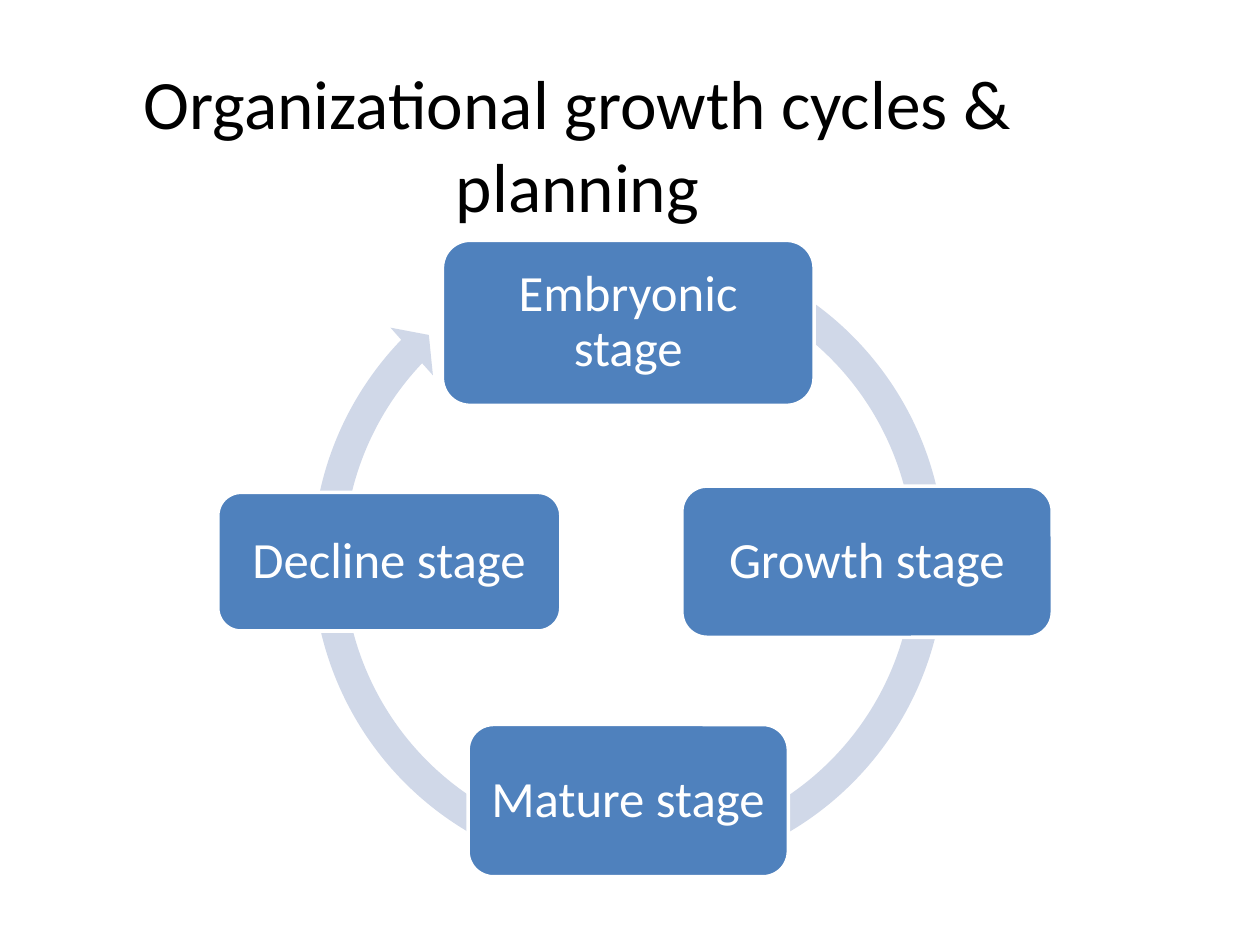
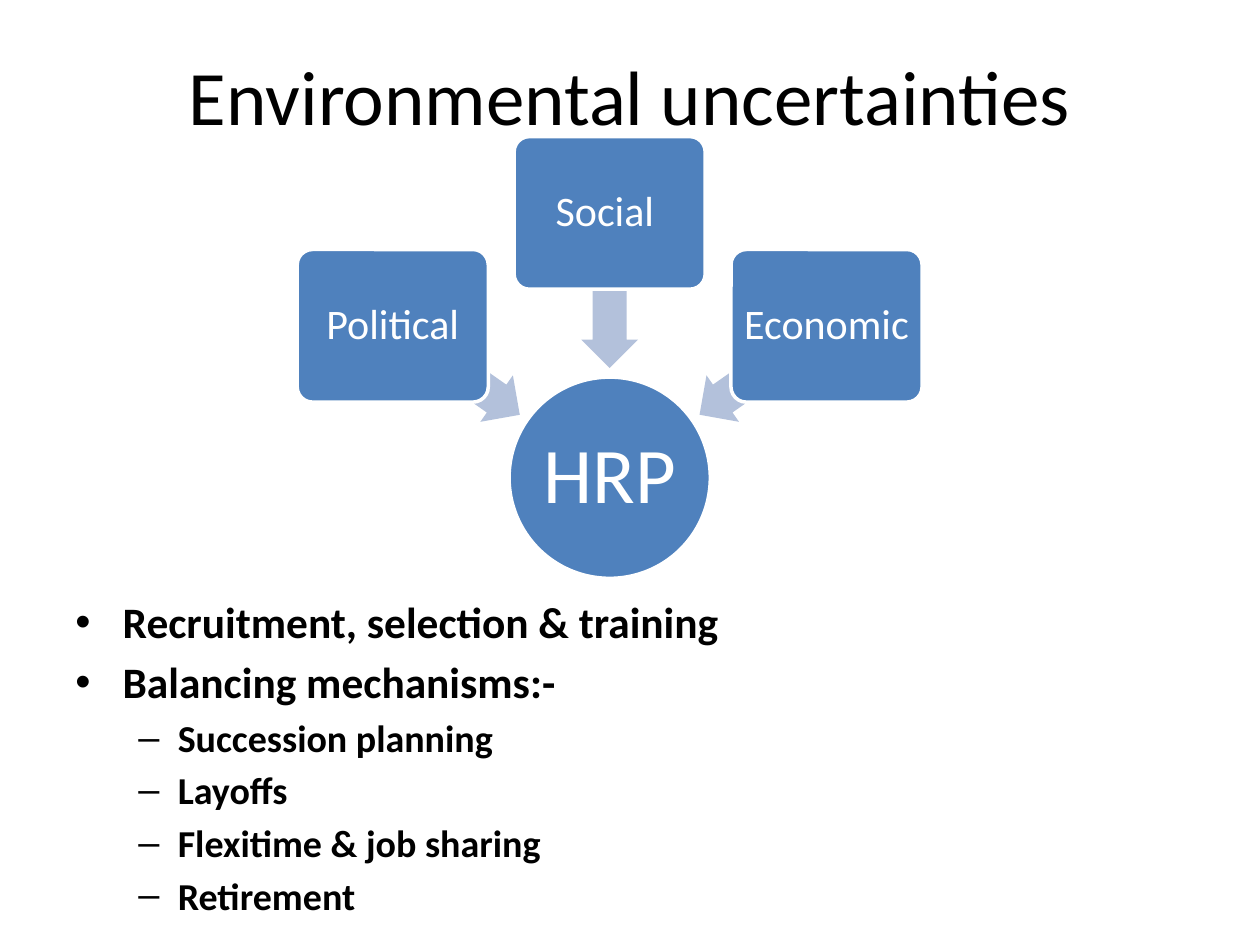
from dataclasses import dataclass
from math import cos, radians, sin

from lxml import etree
from pptx import Presentation
from pptx.dml.color import RGBColor
from pptx.enum.shapes import MSO_SHAPE
from pptx.enum.text import MSO_ANCHOR, PP_ALIGN
from pptx.oxml.ns import qn
from pptx.util import Pt

ROUNDED = MSO_SHAPE.ROUNDED_RECTANGLE
OVAL = MSO_SHAPE.OVAL
LEFT_ARROW = MSO_SHAPE.LEFT_ARROW
CIRCULAR_ARROW = MSO_SHAPE.CIRCULAR_ARROW
TOP = MSO_ANCHOR.TOP
MIDDLE = MSO_ANCHOR.MIDDLE
LEFT = PP_ALIGN.LEFT
CENTER = PP_ALIGN.CENTER


@dataclass(frozen=True)
class Theme:
    font: str = "Calibri"
    text: RGBColor = RGBColor(0x00, 0x00, 0x00)
    light: RGBColor = RGBColor(0xFF, 0xFF, 0xFF)
    accent: RGBColor = RGBColor(0x4F, 0x81, 0xBD)
    cycle: RGBColor = RGBColor(0xD0, 0xD8, 0xE8)
    arrow: RGBColor = RGBColor(0xB3, 0xC1, 0xDB)
    title_size: float = 44
    long_title_size: float = 39.6
    stage_size: float = 29
    source_size: float = 24
    hub_size: float = 45
    body_sizes: tuple = (24.8, 21.7)
    bullets: tuple = ("•", "–")
    indents: tuple = ((27, 27), (58.5, 22.5))


def polar(center, radius, angle):
    x, y = center
    return x + radius * cos(radians(angle)), y + radius * sin(radians(angle))


class Deck:
    def __init__(self, theme):
        self.theme = theme
        self.presentation = Presentation()
        self.presentation.slide_width = Pt(720)
        self.presentation.slide_height = Pt(540)
        self.slide = None

    def add_slide(self):
        self.slide = self.presentation.slides.add_slide(self.presentation.slide_layouts[6])

    def style(self, paragraph, size, color, alignment, bold=False):
        paragraph.alignment = alignment
        for run in paragraph.runs:
            run.font.name = self.theme.font
            run.font.size = Pt(size)
            run.font.bold = bold
            run.font.color.rgb = color

    def text_box(self, left, top, width, height):
        box = self.slide.shapes.add_textbox(Pt(left), Pt(top), Pt(width), Pt(height))
        box.text_frame.word_wrap = True
        box.text_frame.vertical_anchor = TOP
        return box.text_frame

    def title(self, text, top, width, size):
        frame = self.text_box(36, top, width, 90)
        frame.text = text
        self.style(frame.paragraphs[0], size, self.theme.text, CENTER)

    def shape(self, kind, center, width, height, fill, adjustments=(), rotation=0):
        x, y = center
        shape = self.slide.shapes.add_shape(
            kind, Pt(x - width / 2), Pt(y - height / 2), Pt(width), Pt(height))
        for index, value in enumerate(adjustments):
            shape.adjustments[index] = value
        shape.rotation = rotation
        shape.shadow.inherit = False
        shape.fill.solid()
        shape.fill.fore_color.rgb = fill
        shape.line.fill.background()
        return shape

    def node(self, kind, text, center, width, height, size, inset, adjustments=()):
        shape = self.shape(kind, center, width, height, self.theme.accent, adjustments)
        shape.line.color.rgb = self.theme.light
        shape.line.width = Pt(2)
        frame = shape.text_frame
        frame.word_wrap = True
        frame.vertical_anchor = MIDDLE
        frame.margin_left = frame.margin_right = Pt(inset)
        frame.margin_top = frame.margin_bottom = Pt(inset)
        frame.text = text
        frame.paragraphs[0].line_spacing = 0.9
        self.style(frame.paragraphs[0], size, self.theme.light, CENTER)

    def bullet_list(self, items, left, top, width, height):
        frame = self.text_box(left, top, width, height)
        frame.text = "\n".join(text for _, text in items)
        for index, (level, _) in enumerate(items):
            paragraph = frame.paragraphs[index]
            size = self.theme.body_sizes[level]
            self.style(paragraph, size, self.theme.text, LEFT, bold=True)
            paragraph.level = level
            paragraph.space_before = Pt(0.185 * size if index else 0)
            margin, hanging = self.theme.indents[level]
            properties = paragraph._p.get_or_add_pPr()
            properties.set("marL", str(Pt(margin)))
            properties.set("indent", str(-Pt(hanging)))
            etree.SubElement(properties, qn("a:buFont"), typeface="Arial")
            etree.SubElement(properties, qn("a:buChar"), char=self.theme.bullets[level])


def growth_cycle(deck):
    theme = deck.theme
    deck.add_slide()
    deck.title("Organizational growth cycles & planning", 31, 588, theme.long_title_size)
    deck.shape(CIRCULAR_ARROW, (359.3, 319.7), 380, 380, theme.cycle,
               (0.047, 2.729, 134.261, 176.394, 0.048))
    stages = (
        ("Embryonic stage", 212.4, 94.3),
        ("Growth stage", 211.7, 86.4),
        ("Mature stage", 183, 87),
        ("Decline stage", 196, 79.2),
    )
    for index, (text, width, height) in enumerate(stages):
        center = polar((359, 321), 136.5, 90 * index - 90)
        deck.node(ROUNDED, text, center, width, height, theme.stage_size, 8)


def uncertainties(deck):
    theme = deck.theme
    deck.add_slide()
    deck.title("Environmental uncertainties", 24, 648, theme.title_size)
    deck.bullet_list((
        (0, "Recruitment, selection & training"),
        (0, "Balancing mechanisms:-"),
        (1, "Succession planning"),
        (1, "Layoffs"),
        (1, "Flexitime & job sharing"),
        (1, "Retirement"),
    ), 36, 336.5, 588, 173.5)
    hub = (348.4, 273)
    deck.node(OVAL, "HRP", hub, 115, 115, theme.hub_size, 2)
    for index, source in enumerate(("Political", "Social ", "Economic")):
        angle = 215 + 55 * index
        deck.shape(LEFT_ARROW, polar(hub, 107, angle), 88.6, 32.4, theme.arrow,
                   (0.6, 0.5), angle)
        deck.node(ROUNDED, source, polar(hub, 151.3, angle), 109.2, 87.2,
                  theme.source_size, 3, (0.1,))


def main():
    deck = Deck(Theme())
    growth_cycle(deck)
    uncertainties(deck)
    deck.presentation.save("out.pptx")


if __name__ == "__main__":
    main()
